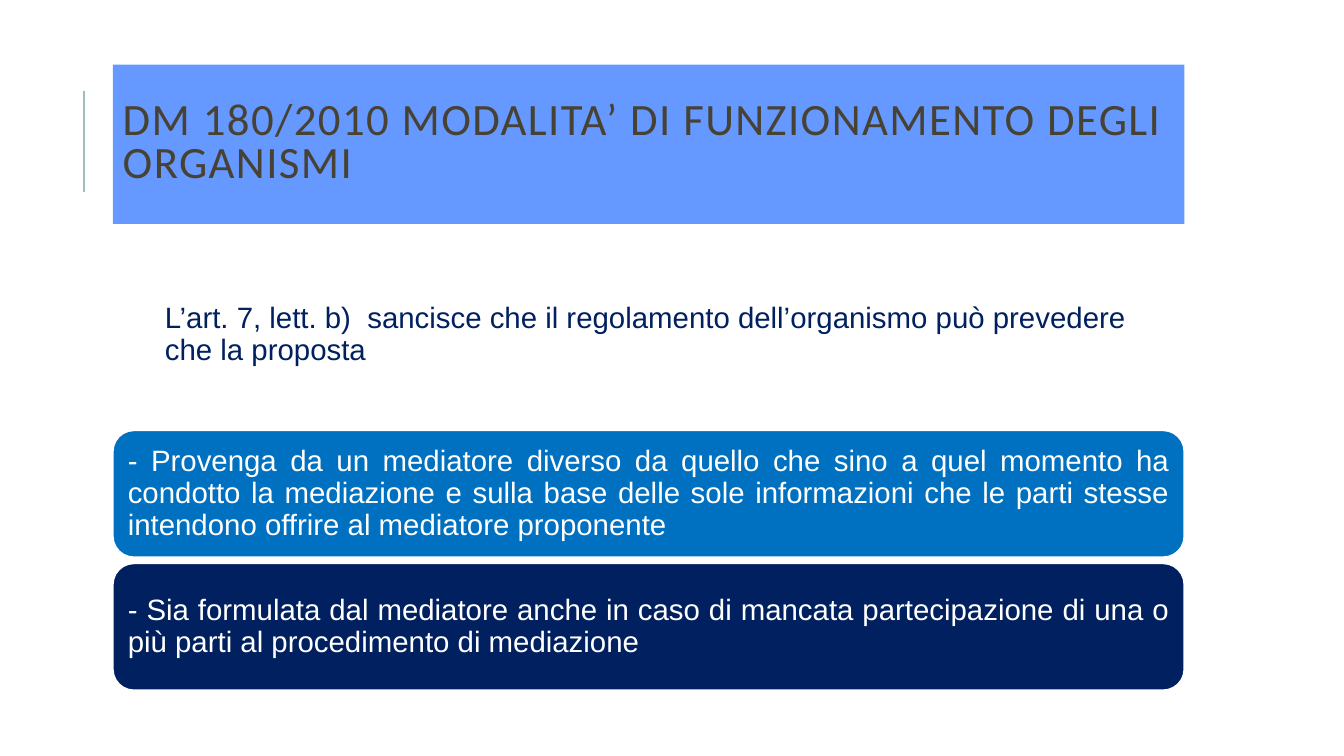
from dataclasses import dataclass

from lxml.etree import SubElement
from pptx import Presentation
from pptx.dml.color import RGBColor
from pptx.enum.shapes import MSO_CONNECTOR, MSO_SHAPE
from pptx.enum.text import MSO_ANCHOR, PP_ALIGN
from pptx.oxml.ns import qn
from pptx.shapes.autoshape import Shape
from pptx.slide import Slide
from pptx.util import Pt

COLORS = {
    "white": "FFFFFF",
    "title fill": "6699FF",
    "title text": "474233",
    "accent line": "9CBEBD",
    "blue": "0070C0",
    "navy": "002060",
}
LEFT, WIDTH = 80.6, 765.4
OPTION_TOP, OPTION_HEIGHT, OPTION_GAP = 307.4, 90.7, 4.3


@dataclass(frozen=True)
class Panel:
    text: str
    left: float
    top: float
    width: float
    height: float
    fill: str
    text_color: str = "white"
    align: PP_ALIGN = PP_ALIGN.JUSTIFY


def color(name: str) -> RGBColor:
    return RGBColor.from_string(COLORS[name])


def write_text(shape: Shape, text: str, *, font: str, size: float, text_color: str,
               align: PP_ALIGN, line_spacing: float, inset: float = 7.2,
               letter_spacing: float = 0) -> None:
    frame = shape.text_frame
    frame.word_wrap = True
    frame.vertical_anchor = MSO_ANCHOR.MIDDLE
    frame.margin_left = frame.margin_right = Pt(inset)
    frame.margin_top = frame.margin_bottom = Pt(min(inset, 6.6))
    paragraph = frame.paragraphs[0]
    paragraph.alignment = align
    paragraph.line_spacing = line_spacing
    run = paragraph.add_run()
    run.text = text
    run.font.name = font
    run.font.size = Pt(size)
    run.font.color.rgb = color(text_color)
    if letter_spacing:
        for properties in shape.element.iter(qn("a:rPr")):
            properties.set("spc", str(round(letter_spacing * 100)))


def add_box(slide: Slide, kind: MSO_SHAPE, left: float, top: float,
            width: float, height: float, fill: str) -> Shape:
    shape = slide.shapes.add_shape(kind, Pt(left), Pt(top), Pt(width), Pt(height))
    shape.shadow.inherit = False
    shape.fill.solid()
    shape.fill.fore_color.rgb = color(fill)
    shape.line.fill.background()
    return shape


def add_title(slide: Slide, text: str) -> None:
    shape = add_box(slide, MSO_SHAPE.RECTANGLE, LEFT, 46.1, WIDTH, 113.8, "title fill")
    write_text(shape, text, font="Calibri", size=32, text_color="title text",
               align=PP_ALIGN.LEFT, line_spacing=0.8, letter_spacing=1)


def add_panel(slide: Slide, panel: Panel) -> None:
    shape = add_box(slide, MSO_SHAPE.ROUNDED_RECTANGLE, panel.left, panel.top,
                    panel.width, panel.height, panel.fill)
    shape.line.color.rgb = color("white")
    shape.line.width = Pt(1.25)
    write_text(shape, panel.text, font="Arial", size=21, text_color=panel.text_color,
               align=panel.align, line_spacing=0.9, inset=6.3)


def add_accent_line(slide: Slide) -> None:
    line = slide.shapes.add_connector(MSO_CONNECTOR.STRAIGHT,
                                      Pt(60), Pt(136.8), Pt(60), Pt(64.8))
    line.line.color.rgb = color("accent line")
    line.line.width = Pt(1.5)
    SubElement(line.element.find(qn("p:spPr")), qn("a:effectLst"))


def main() -> None:
    presentation = Presentation()
    presentation.slide_width, presentation.slide_height = Pt(960), Pt(540)
    slide = presentation.slides.add_slide(presentation.slide_layouts[6])

    add_accent_line(slide)
    add_title(slide, "DM 180/2010 MODALITA’ DI FUNZIONAMENTO DEGLI ORGANISMI")
    add_panel(slide, Panel(
        "L’art. 7, lett. b)  sancisce che il regolamento dell’organismo può prevedere "
        "che la proposta",
        105.8, 180, 733.7, 118.1, "white", "navy", PP_ALIGN.LEFT))

    options = [
        ("- Provenga da un mediatore diverso da quello che sino a quel momento ha "
         "condotto la mediazione e sulla base delle sole informazioni che le parti "
         "stesse intendono offrire al mediatore proponente", "blue"),
        ("- Sia formulata dal mediatore anche in caso di mancata partecipazione di "
         "una o più parti al procedimento di mediazione", "navy"),
    ]
    for index, (text, fill) in enumerate(options):
        top = OPTION_TOP + index * (OPTION_HEIGHT + OPTION_GAP)
        add_panel(slide, Panel(text, LEFT, top, WIDTH, OPTION_HEIGHT, fill))

    presentation.save("out.pptx")


if __name__ == "__main__":
    main()
